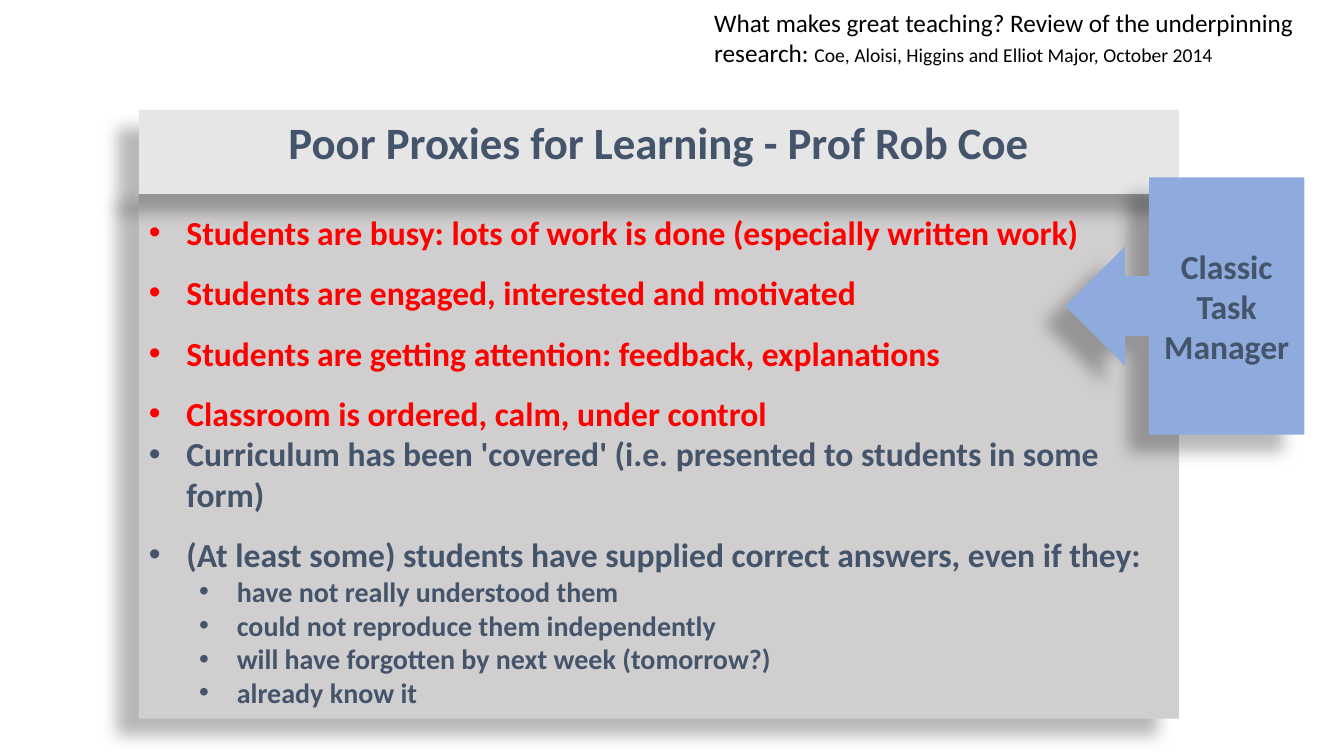
from lxml import etree
from pptx import Presentation
from pptx import util as u
from pptx.dml.color import RGBColor
from pptx.enum import shapes, text
from pptx.oxml import parse_xml
from pptx.oxml.ns import nsdecls, qn

RED = RGBColor(0xFF, 0x00, 0x00)
SLATE = RGBColor(0x44, 0x54, 0x6A)
BLACK = RGBColor(0x00, 0x00, 0x00)
GREY = RGBColor(0xD0, 0xCE, 0xCE)
PALE_GREY = RGBColor(0xE7, 0xE6, 0xE6)
BLUE = RGBColor(0x8F, 0xAA, 0xDC)
HANGING = 0.95

SHADOW = (
    f'<a:effectLst {nsdecls("a")}>'
    '<a:outerShdw blurRad="150000" dist="250000" dir="8460000" algn="tl" rotWithShape="0">'
    '<a:srgbClr val="000000"><a:alpha val="28000"/></a:srgbClr>'
    '</a:outerShdw></a:effectLst>'
)

PROXIES = [
    ("Students are busy: lots of work is done (especially written work)", RED, 1.5),
    ("Students are engaged, interested and motivated", RED, 1.5),
    ("Students are getting attention: feedback, explanations", RED, 1.5),
    ("Classroom is ordered, calm, under control", RED, 1.5),
    ("Curriculum has been 'covered' (i.e. presented to students in some form)", SLATE, 1),
    ("(At least some) students have supplied correct answers, even if they:", SLATE, 1.5),
]
CAVEATS = [
    "have not really understood them",
    "could not reproduce them independently",
    "will have forgotten by next week (tomorrow?)",
    "already know it",
]


def add_run(p, words, size=24, color=SLATE, bold=True):
    r = p.add_run()
    r.text = words
    r.font.name = "Calibri"
    r.font.size = u.Pt(size)
    r.font.bold = bold
    r.font.color.rgb = color


class SlideBuilder:
    def __init__(self, prs):
        self.slide = prs.slides.add_slide(prs.slide_layouts[5])

    def style(self, sp, fill):
        sp.fill.solid()
        sp.fill.fore_color.rgb = fill
        sp.line.fill.background()
        sp.shadow.inherit = False
        props = sp._element.spPr
        props.replace(props.find(qn("a:effectLst")), parse_xml(SHADOW))

    def frame(self, sp, anchor=text.MSO_ANCHOR.TOP, fit=text.MSO_AUTO_SIZE.SHAPE_TO_FIT_TEXT):
        tf = sp.text_frame
        tf.word_wrap = True
        tf.auto_size = fit
        tf.vertical_anchor = anchor
        return tf

    def block(self, kind, box, fill, **layout):
        sp = self.slide.shapes.add_shape(kind, *map(u.Cm, box))
        self.style(sp, fill)
        return self.frame(sp, **layout)

    def title(self, box, words, fill):
        sp = self.slide.shapes.title
        sp.left, sp.top, sp.width, sp.height = map(u.Cm, box)
        self.style(sp, fill)
        p = self.frame(sp).paragraphs[0]
        p.alignment = text.PP_ALIGN.CENTER
        p.line_spacing = 1.0
        add_run(p, words, size=32)
        self.slide.shapes._spTree.append(sp._element)

    def text_box(self, box):
        return self.frame(self.slide.shapes.add_textbox(*map(u.Cm, box)))

    def bullet(self, tf, words, level=0, spacing=1, **style):
        p = tf.paragraphs[0] if not tf.paragraphs[0].runs else tf.add_paragraph()
        p.alignment = text.PP_ALIGN.LEFT
        p.level = level
        p.line_spacing = float(spacing)
        props = p._p.get_or_add_pPr()
        props.set("marL", str(u.Cm(HANGING + 1.27 * level)))
        props.set("indent", str(-u.Cm(HANGING)))
        etree.SubElement(props, qn("a:buFont")).set("typeface", "Arial")
        etree.SubElement(props, qn("a:buChar")).set("char", "•")
        add_run(p, words, **style)


def main():
    prs = Presentation()
    prs.slide_width, prs.slide_height = u.Cm(33.87), u.Cm(19.05)
    s = SlideBuilder(prs)

    proxies = s.block(shapes.MSO_SHAPE.RECTANGLE, (3.5, 4.7, 26.21, 13.41), GREY)
    for words, color, spacing in PROXIES:
        s.bullet(proxies, words, spacing=spacing, color=color)
    for words in CAVEATS:
        s.bullet(proxies, words, level=1, size=20)

    s.title((3.5, 2.77, 26.21, 1.63), "Poor Proxies for Learning - Prof Rob Coe", PALE_GREY)

    callout = s.block(shapes.MSO_SHAPE.LEFT_ARROW_CALLOUT, (26.85, 4.47, 6.02, 6.48), BLUE,
                      anchor=text.MSO_ANCHOR.MIDDLE, fit=text.MSO_AUTO_SIZE.NONE)
    callout.paragraphs[0].alignment = text.PP_ALIGN.CENTER
    add_run(callout.paragraphs[0], "Classic Task Manager")

    source = s.text_box((17.75, 0.05, 16.94, 1.8)).paragraphs[0]
    add_run(source, "What makes great teaching? Review of the underpinning research: ",
            size=18, color=BLACK, bold=False)
    add_run(source, "Coe, Aloisi, Higgins and Elliot Major, October 2014",
            size=14, color=BLACK, bold=False)

    prs.save("out.pptx")


if __name__ == "__main__":
    main()
